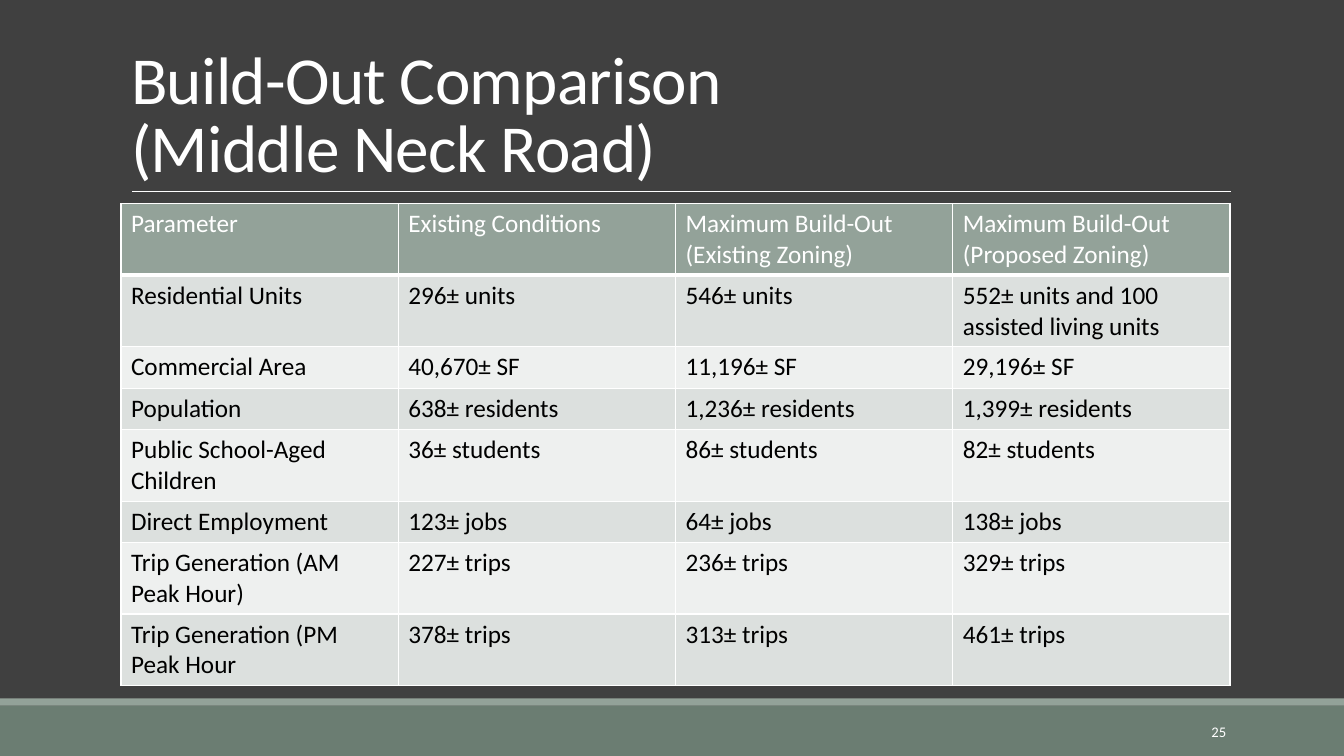
from lxml.etree import SubElement
from pptx import Presentation
from pptx.dml.color import RGBColor
from pptx.enum.shapes import MSO_CONNECTOR, MSO_SHAPE
from pptx.enum.text import MSO_ANCHOR as ANCHOR, MSO_AUTO_SIZE as AUTO, PP_ALIGN as ALIGN
from pptx.oxml.ns import qn
from pptx.util import Inches, Pt

COLORS = {
    "background": "404040",
    "footer": "6B7D72",
    "accent": "93A299",
    "white": "FFFFFF",
    "black": "000000",
    "band_dark": "DCE0DE",
    "band_light": "EEF0EF",
}
TITLE = "Build-Out Comparison\n(Middle Neck Road)"
ROWS = [
    ["Parameter", "Existing Conditions", "Maximum Build-Out (Existing Zoning)",
     "Maximum Build-Out (Proposed Zoning)"],
    ["Residential Units", "296± units", "546± units",
     "552± units and 100 assisted living units"],
    ["Commercial Area", "40,670± SF", "11,196± SF", "29,196± SF"],
    ["Population", "638± residents", "1,236± residents", "1,399± residents"],
    ["Public School-Aged Children", "36± students", "86± students", "82± students"],
    ["Direct Employment", "123± jobs", "64± jobs", "138± jobs"],
    ["Trip Generation (AM Peak Hour)", "227± trips", "236± trips", "329± trips"],
    ["Trip Generation (PM Peak Hour", "378± trips", "313± trips", "461± trips"],
]


def rgb(name):
    return RGBColor.from_string(COLORS[name])


def apply(obj, values):
    for name, value in values.items():
        setattr(obj, name, value)


def write(p, text, size, color):
    p.text = text
    for r in p.runs:
        apply(r.font, {"name": "Calibri", "size": Pt(size), "bold": False})
        r.font.color.rgb = rgb(color)


def place(sp, left, top, width, height):
    apply(sp, {"left": Inches(left), "top": Inches(top),
               "width": Inches(width), "height": Inches(height)})


def add_bar(slide, top, height, color):
    sp = slide.shapes.add_shape(MSO_SHAPE.RECTANGLE, 0, Inches(top),
                                Inches(13.33), Inches(height))
    sp.shadow.inherit = False
    sp.fill.solid()
    sp.fill.fore_color.rgb = rgb(color)
    sp.line.fill.background()


def add_rule(slide, left, right, y):
    line = slide.shapes.add_connector(MSO_CONNECTOR.STRAIGHT, Inches(left), Inches(y),
                                      Inches(right), Inches(y))
    line.line.color.rgb = rgb("white")
    line.line.width = Pt(0.5)
    SubElement(line._element.spPr, qn("a:effectLst"))


def add_title(slide):
    sp = slide.shapes.title
    place(sp, 1.2, 0.31, 11, 1.59)
    tf = sp.text_frame
    apply(tf, {"word_wrap": True, "auto_size": AUTO.NONE, "vertical_anchor": ANCHOR.BOTTOM})
    p = tf.paragraphs[0]
    write(p, TITLE, 48, "white")
    apply(p, {"alignment": ALIGN.LEFT, "line_spacing": 0.85})
    for r in p.runs:
        r.font._element.set("spc", "-50")


def add_borders(cell, bottom):
    tc_pr = cell._tc.get_or_add_tcPr()
    for side, width in {"L": 1, "R": 1, "T": 1, "B": bottom}.items():
        ln = SubElement(tc_pr, qn(f"a:ln{side}"), w=str(Pt(width)))
        fill = SubElement(ln, qn("a:solidFill"))
        SubElement(fill, qn("a:srgbClr"), val=COLORS["white"])


def add_comparison_table(slide):
    frame = slide.shapes.add_table(len(ROWS), len(ROWS[0]), Inches(1.2), Inches(2.02),
                                   Inches(11), Inches(0.41 * len(ROWS)))
    for i, row in enumerate(ROWS):
        header = i == 0
        band = "accent" if header else ("band_light", "band_dark")[i % 2]
        for j, text in enumerate(row):
            cell = frame.table.cell(i, j)
            add_borders(cell, 3 if header else 1)
            cell.fill.solid()
            cell.fill.fore_color.rgb = rgb(band)
            write(cell.text_frame.paragraphs[0], text, 18, "white" if header else "black")


def add_page_number(slide, number):
    sp = slide.shapes.add_textbox(Inches(10.83), Inches(7.06), Inches(1.43), Inches(0.4))
    tf = sp.text_frame
    apply(tf, {"word_wrap": True, "vertical_anchor": ANCHOR.MIDDLE})
    p = tf.paragraphs[0]
    write(p, number, 10.5, "white")
    p.alignment = ALIGN.RIGHT


def main():
    prs = Presentation()
    apply(prs, {"slide_width": Inches(13.33), "slide_height": Inches(7.5)})
    slide = prs.slides.add_slide(prs.slide_layouts[5])
    slide.background.fill.solid()
    slide.background.fill.fore_color.rgb = rgb("background")
    add_bar(slide, 7, 0.5, "footer")
    add_bar(slide, 6.93, 0.07, "accent")
    add_rule(slide, 1.31, 12.21, 1.9)
    add_title(slide)
    add_comparison_table(slide)
    add_page_number(slide, "25")
    prs.save("out.pptx")


if __name__ == "__main__":
    main()
